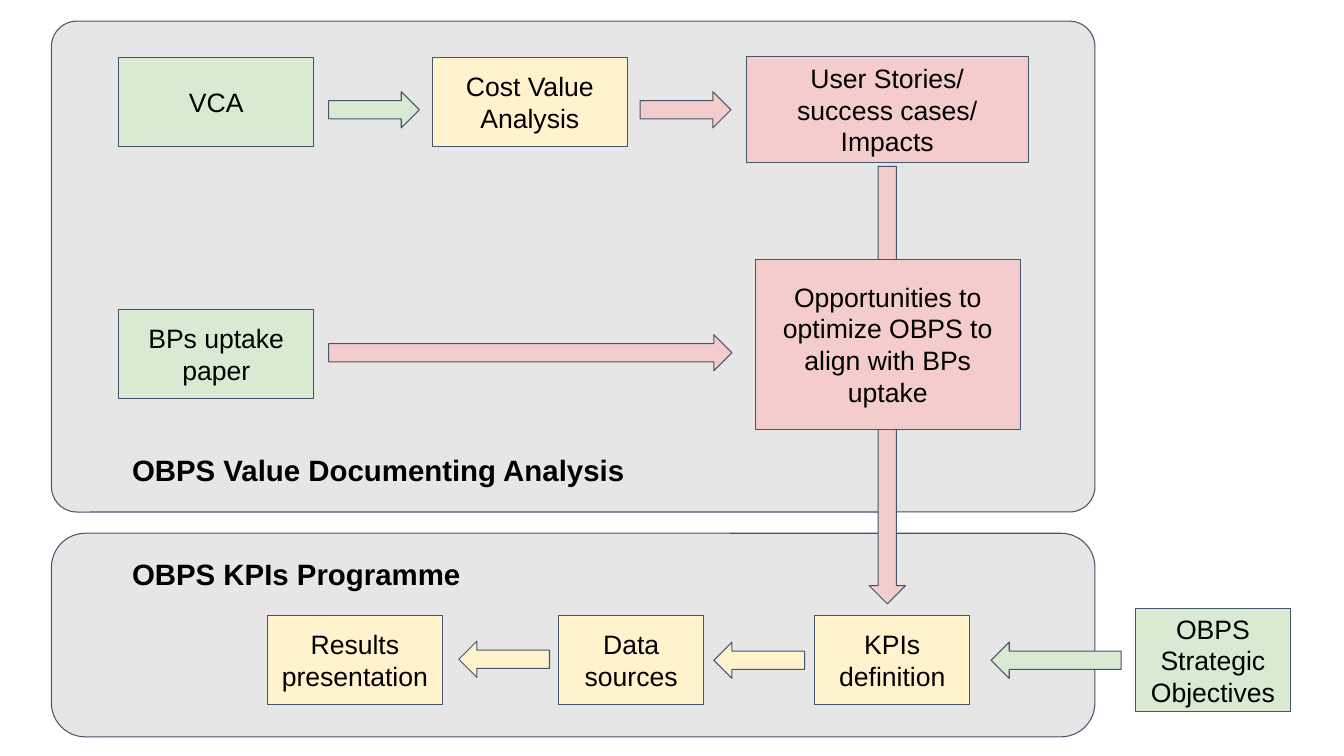
import pptx
import pptx.util
import pptx.dml.color
import pptx.enum.shapes
import pptx.enum.text
from dataclasses import dataclass

Inches = pptx.util.Inches
Pt = pptx.util.Pt
SHAPE = pptx.enum.shapes.MSO_SHAPE
ALIGN = pptx.enum.text.PP_ALIGN
ANCHOR = pptx.enum.text.MSO_ANCHOR


@dataclass(frozen=True)
class Theme:
    panel: str = "E7E6E6"
    outline: str = "44546A"
    text: str = "000000"
    green: str = "D9EAD3"
    yellow: str = "FFF2CC"
    pink: str = "F4CCCC"
    font: str = "Arial"
    box_size: int = 19
    heading_size: int = 21
    line_width: float = 0.75
    inset: float = 0.13


THEME = Theme()
BOX_HEIGHT = 0.88
ARROW_HEIGHT = 0.36


def rgb(colour):
    return pptx.dml.color.RGBColor.from_string(colour)


def add_outlined(slide, kind, x, y, w, h, fill):
    sp = slide.shapes.add_shape(kind, Inches(x), Inches(y), Inches(w), Inches(h))
    sp.shadow.inherit = False
    sp.fill.solid()
    sp.fill.fore_color.rgb = rgb(fill)
    sp.line.color.rgb = rgb(THEME.outline)
    sp.line.width = Pt(THEME.line_width)
    return sp


def write_text(sp, text, size, align, anchor, bold=False):
    tf = sp.text_frame
    tf.word_wrap = True
    tf.vertical_anchor = anchor
    tf.margin_left = tf.margin_right = Inches(THEME.inset)
    tf.margin_top = tf.margin_bottom = Inches(THEME.inset)
    tf.text = text
    for p in tf.paragraphs:
        p.alignment = align
        for r in p.runs:
            r.font.name = THEME.font
            r.font.size = Pt(size)
            r.font.bold = bold
            r.font.color.rgb = rgb(THEME.text)


def add_panel(slide, y, h, radius):
    sp = add_outlined(slide, SHAPE.ROUNDED_RECTANGLE, 0.51, y, 10.35, h, THEME.panel)
    sp.adjustments[0] = radius


def add_heading(slide, text, y, w):
    sp = slide.shapes.add_textbox(Inches(1.18), Inches(y), Inches(w), Inches(0.62))
    write_text(sp, text, THEME.heading_size, ALIGN.LEFT, ANCHOR.TOP, bold=True)
    sp.text_frame.paragraphs[0].line_spacing = 1.15


def add_box(slide, text, fill, x, y, w, h=BOX_HEIGHT):
    sp = add_outlined(slide, SHAPE.RECTANGLE, x, y, w, h, fill)
    write_text(sp, text, THEME.box_size, ALIGN.CENTER, ANCHOR.MIDDLE)


def add_arrow(slide, fill, x, y, length=0.9, angle=0):
    sp = add_outlined(slide, SHAPE.RIGHT_ARROW, x, y, length, ARROW_HEIGHT, fill)
    sp.rotation = angle


def main():
    prs = pptx.Presentation()
    prs.slide_width = Inches(13.33)
    prs.slide_height = Inches(7.5)
    slide = prs.slides.add_slide(prs.slide_layouts[6])
    green, yellow, pink = THEME.green, THEME.yellow, THEME.pink

    # Panels and their headings
    add_panel(slide, 0.21, 4.87, 0.052)
    add_panel(slide, 5.29, 2.02, 0.167)
    add_heading(slide, "OBPS Value Documenting Analysis", 4.3, 5.48)
    add_heading(slide, "OBPS KPIs Programme", 5.33, 5.03)

    # Arrows, beneath the boxes so the long one passes behind
    add_arrow(slide, green, 3.26, 0.91)
    add_arrow(slide, pink, 6.35, 0.91)
    add_arrow(slide, pink, 3.26, 3.32, 4)
    add_arrow(slide, pink, 6.63, 3.64, 4.34, angle=90)
    add_arrow(slide, green, 9.83, 6.37, 1.29, angle=180)
    add_arrow(slide, yellow, 7.08, 6.37, angle=180)
    add_arrow(slide, yellow, 4.55, 6.36, angle=180)

    # Value documenting analysis
    add_box(slide, "VCA", green, 1.18, 0.57, 1.93)
    add_box(slide, "Cost Value Analysis", yellow, 4.29, 0.57, 1.93)
    add_box(slide, "User Stories/\nsuccess cases/\nImpacts", pink, 7.4, 0.56, 2.8, 1.05)
    add_box(slide, "BPs uptake paper", green, 1.18, 3.07, 1.93)
    add_box(slide, "Opportunities to optimize OBPS to align with BPs uptake",
            pink, 7.49, 2.57, 2.63, 1.69)

    # KPIs programme
    add_box(slide, "OBPS Strategic Objectives", green, 11.26, 6.04, 1.54, 1.02)
    add_box(slide, "KPIs\ndefinition", yellow, 8.08, 6.11, 1.54)
    add_box(slide, "Data sources", yellow, 5.54, 6.11, 1.44)
    add_box(slide, "Results presentation", yellow, 2.65, 6.11, 1.74)

    prs.save("out.pptx")


if __name__ == "__main__":
    main()
